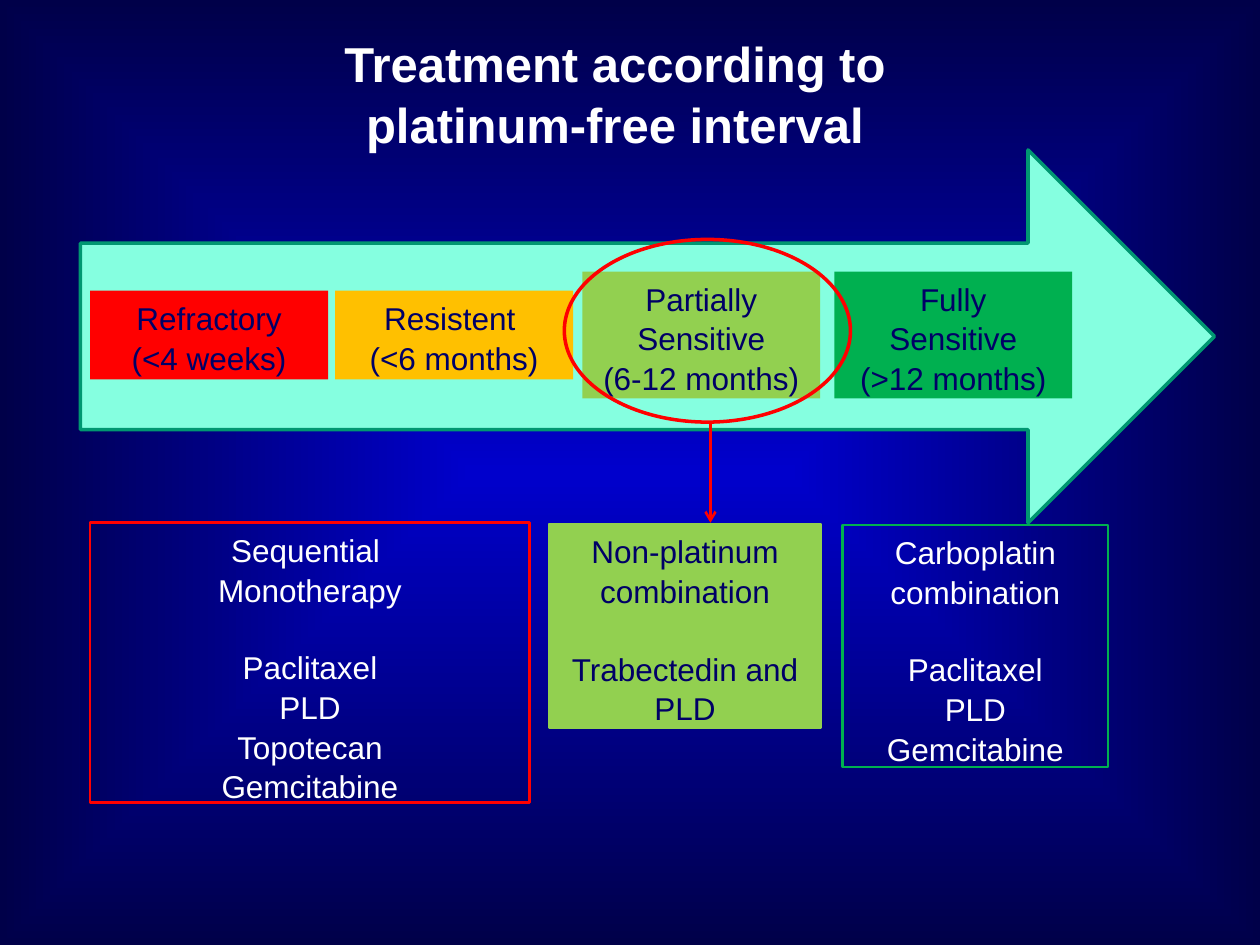
"""Build a slide on treatment according to the platinum-free interval."""
import pptx
import pptx.dml.color
import pptx.enum.shapes
import pptx.enum.text
import pptx.oxml
import pptx.oxml.ns
import pptx.util

Pt = pptx.util.Pt
SHAPES = pptx.enum.shapes.MSO_SHAPE

THEME = {
    "font": "Arial", "title": 28, "body": 18, "spacing": 1.05, "gap": 21.75,
    "white": "FFFFFF", "navy": "000066", "red": "FF0000", "amber": "FFC000",
    "lime": "92D050", "green": "00B050", "mint": "85FFE0", "teal": "009771",
    "glow": "0000CC", "night": "000049",
}
HEADING = "Treatment according to platinum-free interval"
HEADING_BOX = (138.25, 13.7, 426.25, 74.9)
INTERVAL_ARROW = (46, 85.7, 648, 213.1)
FOCUS_RING = (322.5, 136.8, 163.5, 104.4)
STAGE_WIDTH, STAGE_MIDDLE = 136, 191.5
STAGES = [
    (51.5, "red", ["Refractory", "(<4 weeks)"]),
    (191.5, "amber", ["Resistent ", "(<6 months)"]),
    (332.75, "lime", ["Partially", "Sensitive", "(6-12 months)"]),
    (476.75, "green", ["Fully", "Sensitive", "(>12 months)"]),
]
REGIMENS = [
    ((51.5, 298.75, 251.25, 160), None, "red", "white",
     [["Sequential ", "Monotherapy"], ["Paclitaxel", "PLD", "Topotecan", "Gemcitabine"]]),
    ((313.75, 299.5, 155.5, 116.25), "lime", "lime", "navy",
     [["Non-platinum", "combination"], ["Trabectedin and PLD"]]),
    ((481.5, 300, 151.75, 138.25), None, "green", "white",
     [["Carboplatin", "combination"], ["Paclitaxel", "PLD", "Gemcitabine"]]),
]


def colour(name):
    return pptx.dml.color.RGBColor.from_string(THEME[name])


def paint_background(slide):
    fill = slide.background.fill
    fill.gradient()
    for stop, name in zip(fill.gradient_stops, ("glow", "night")):
        stop.color.rgb = colour(name)
    gradient = slide.element.find(".//" + pptx.oxml.ns.qn("a:gradFill"))
    linear = gradient.find(pptx.oxml.ns.qn("a:lin"))
    gradient.replace(linear, pptx.oxml.parse_xml(
        f'<a:path {pptx.oxml.ns.nsdecls("a")} path="shape">'
        '<a:fillToRect l="50000" t="50000" r="50000" b="50000"/></a:path>'))


def write(frame, groups, size, ink, bold=False):
    frame.word_wrap = True
    frame.vertical_anchor = pptx.enum.text.MSO_ANCHOR.TOP
    lines = [(line, group > 0 and row == 0)
             for group, rows in enumerate(groups) for row, line in enumerate(rows)]
    for index, (line, opens_group) in enumerate(lines):
        paragraph = frame.add_paragraph() if index else frame.paragraphs[0]
        paragraph.text = line
        paragraph.alignment = pptx.enum.text.PP_ALIGN.CENTER
        paragraph.line_spacing = THEME["spacing"]
        paragraph.space_before = Pt(THEME["gap"] if opens_group else 0)
        paragraph.font.name = THEME["font"]
        paragraph.font.size = Pt(THEME[size])
        paragraph.font.bold = bold
        paragraph.font.color.rgb = colour(ink)


def add_block(slide, preset, box, fill=None, outline=None, weight=1.5):
    block = slide.shapes.add_shape(preset, *map(Pt, box))
    block.shadow.inherit = False
    if fill:
        block.fill.solid()
        block.fill.fore_color.rgb = colour(fill)
    else:
        block.fill.background()
    if outline:
        block.line.color.rgb = colour(outline)
        block.line.width = Pt(weight)
    else:
        block.line.fill.background()
    return block


def add_pointer(slide, x, top, bottom):
    pointer = slide.shapes.add_connector(
        pptx.enum.shapes.MSO_CONNECTOR.STRAIGHT, Pt(x), Pt(top), Pt(x), Pt(bottom))
    pointer.line.color.rgb = colour("red")
    pointer.line.width = Pt(1.5)
    namespace = pptx.oxml.ns.nsdecls("a")
    pointer.line._get_or_add_ln().append(
        pptx.oxml.parse_xml(f'<a:tailEnd {namespace} type="arrow"/>'))
    pointer.element.spPr.append(pptx.oxml.parse_xml(f"<a:effectLst {namespace}/>"))


def main():
    deck = pptx.Presentation()
    deck.slide_width, deck.slide_height = Pt(720), Pt(540)
    slide = deck.slides.add_slide(deck.slide_layouts[5])
    paint_background(slide)

    title = slide.shapes.title
    title.left, title.top, title.width, title.height = map(Pt, HEADING_BOX)
    write(title.text_frame, [[HEADING]], "title", "white", bold=True)

    add_block(slide, SHAPES.RIGHT_ARROW, INTERVAL_ARROW, "mint", "teal", 2)
    for left, fill, lines in STAGES:
        height = len(lines) * THEME["gap"] + 7.2
        box = (left, STAGE_MIDDLE - height / 2, STAGE_WIDTH, height)
        stage = add_block(slide, SHAPES.RECTANGLE, box, fill)
        write(stage.text_frame, [lines], "body", "navy")
    add_block(slide, SHAPES.OVAL, FOCUS_RING, outline="red", weight=2)

    for box, fill, outline, ink, groups in REGIMENS:
        regimen = add_block(slide, SHAPES.RECTANGLE, box, fill, outline)
        write(regimen.text_frame, groups, "body", ink)
    add_pointer(slide, 406, 242, 298.75)

    deck.save("out.pptx")


if __name__ == "__main__":
    main()
